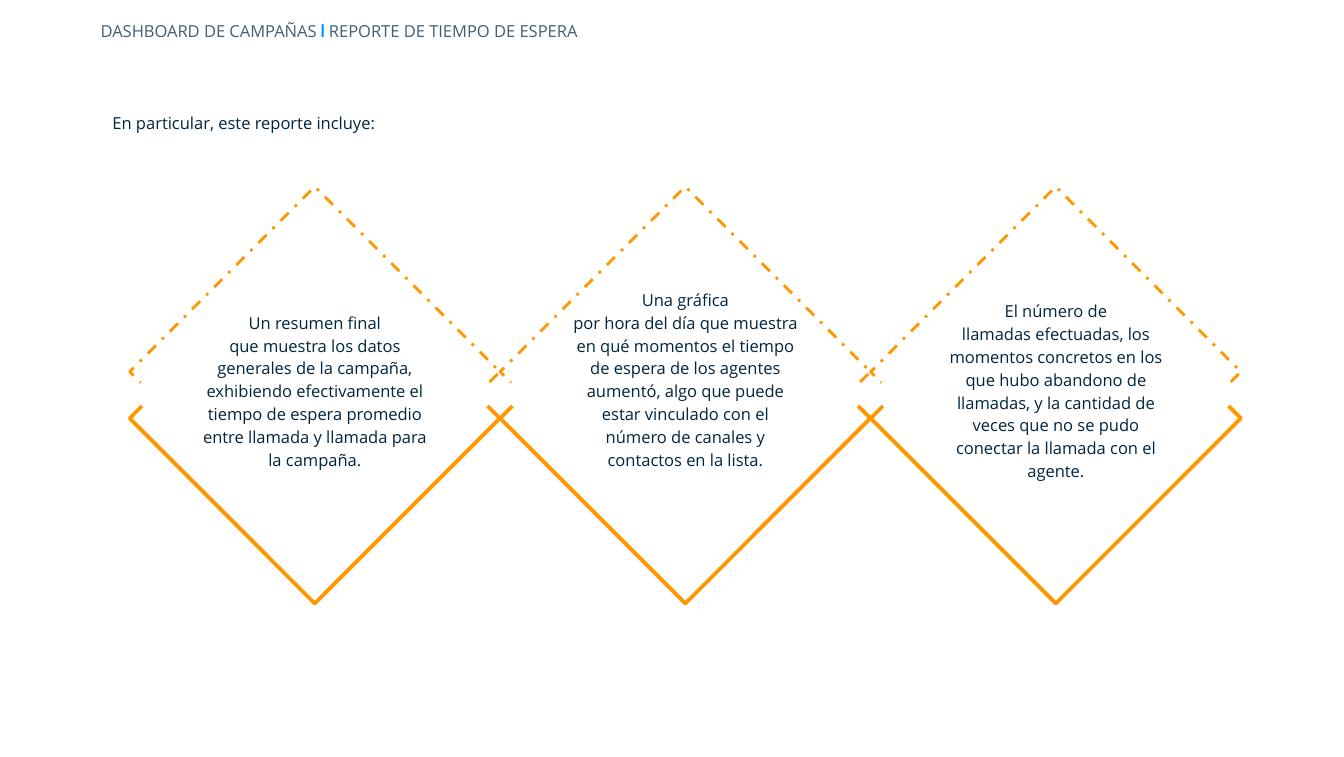
"""Build the slide on what the waiting-time report includes."""
from pptx import Presentation
from pptx.dml.color import RGBColor
from pptx.enum import dml, shapes, text
from pptx.util import Pt

COLORS = {"white": "FFFFFF", "orange": "FF9800", "blue": "0095FF",
          "slate": "435E72", "navy": "002540"}

HEADING = [
    ("DASHBOARD DE CAMPAÑAS", {"name": "Open Sans", "size": Pt(13)}, "slate"),
    (" | ", {"name": "Manrope", "size": Pt(14), "bold": True}, "blue"),
    ("REPORTE DE TIEMPO DE ESPERA", {"name": "Open Sans", "size": Pt(13)}, "slate"),
]
INTRO = "En particular, este reporte incluye:"
CONTENTS = [
    (139, ["Un resumen final",
           "que muestra los datos generales de la campaña, exhibiendo efectivamente "
           "el tiempo de espera promedio entre llamada y llamada para la campaña."]),
    (175, ["Una gráfica",
           "por hora del día que muestra en qué momentos el tiempo de espera de los "
           "agentes aumentó, algo que puede estar vinculado con el número de canales "
           "y contactos en la lista."]),
    (157, ["El número de",
           "llamadas efectuadas, los momentos concretos en los que hubo abandono de "
           "llamadas, y la cantidad de veces que no se pudo conectar la llamada con "
           "el agente."]),
]
BODY_FONT = {"name": "Open Sans", "size": Pt(13)}

FIRST_CENTER, PITCH, MIDDLE = 247.7, 291.6, 306
SIDE, TEXT_WIDTH = 206, 193
LAYERS = [
    {"top": 226, "fill": "white", "width": 3, "dash": None},
    {"top": 189.4, "fill": None, "width": 2.25, "dash": dml.MSO_LINE.DASH_DOT},
    {"top": 206.6, "fill": "white", "width": 0, "dash": None},
]


def rgb(name):
    return RGBColor.from_string(COLORS[name])


def style(font, values, color):
    for key, value in values.items():
        setattr(font, key, value)
    font.color.rgb = rgb(color)


def set_frame(frame, margin, **values):
    for side in ("left", "top", "right", "bottom"):
        setattr(frame, f"margin_{side}", Pt(margin))
    for key, value in values.items():
        setattr(frame, key, value)


def add_heading(slide):
    heading = slide.shapes.title
    place = {"left": 68.4, "top": 7.2, "width": 442.8, "height": 33.8}
    for key, value in place.items():
        setattr(heading, key, Pt(value))
    heading.fill.solid()
    heading.fill.fore_color.rgb = rgb("white")
    set_frame(heading.text_frame, 10.8, word_wrap=True,
              vertical_anchor=text.MSO_ANCHOR.MIDDLE,
              auto_size=text.MSO_AUTO_SIZE.NONE)
    line = heading.text_frame.paragraphs[0]
    line.alignment = text.PP_ALIGN.LEFT
    for words, values, color in HEADING:
        part = line.add_run()
        part.text = words
        style(part.font, values, color)


def add_diamond(slide, center, layer):
    diamond = slide.shapes.add_shape(
        shapes.MSO_SHAPE.RECTANGLE, Pt(center - SIDE / 2), Pt(layer["top"]),
        Pt(SIDE), Pt(SIDE))
    diamond.rotation = 45
    diamond.shadow.inherit = False
    if layer["fill"]:
        diamond.fill.solid()
        diamond.fill.fore_color.rgb = rgb(layer["fill"])
    else:
        diamond.fill.background()
    if layer["width"]:
        diamond.line.color.rgb = rgb("orange")
        diamond.line.width = Pt(layer["width"])
        diamond.line.dash_style = layer["dash"]
    else:
        diamond.line.fill.background()


def add_text(slide, place, lines, alignment, spacing):
    box = slide.shapes.add_textbox(*map(Pt, place))
    frame = box.text_frame
    set_frame(frame, 7.2, word_wrap=True,
              auto_size=text.MSO_AUTO_SIZE.SHAPE_TO_FIT_TEXT)
    frame.text = "\n".join(lines)
    for line in frame.paragraphs:
        line.alignment = alignment
        line.line_spacing = spacing
        style(line.font, BODY_FONT, "navy")


def main():
    deck = Presentation()
    deck.slide_width, deck.slide_height = Pt(1057.7), Pt(595.4)
    slide = deck.slides.add_slide(deck.slide_layouts[5])
    add_heading(slide)
    centers = [FIRST_CENTER + PITCH * i for i in range(len(CONTENTS))]
    for layer in LAYERS:
        for center in centers:
            add_diamond(slide, center, layer)
    for center, (height, lines) in zip(centers, CONTENTS):
        place = (center - TEXT_WIDTH / 2, MIDDLE - height / 2, TEXT_WIDTH, height)
        add_text(slide, place, lines, text.PP_ALIGN.CENTER, 1.15)
    add_text(slide, (81.4, 74.2, 402.5, 30.2), [INTRO], text.PP_ALIGN.JUSTIFY, 1.5)
    deck.save("out.pptx")


if __name__ == "__main__":
    main()
